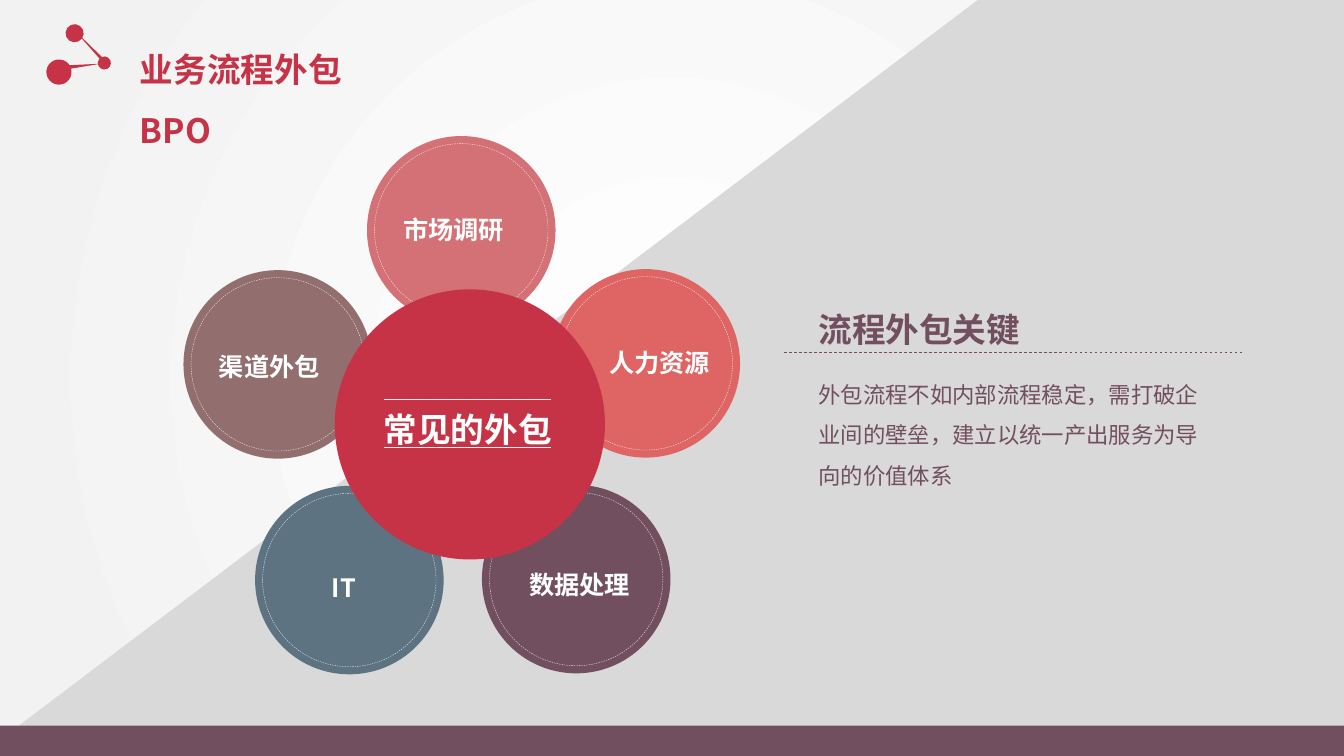
import pptx
import pptx.util
import pptx.dml.color
import pptx.enum.dml
import pptx.enum.shapes
import pptx.enum.text
import pptx.oxml
import pptx.oxml.ns
from dataclasses import dataclass

Inches = pptx.util.Inches
Kind = pptx.enum.shapes.MSO_SHAPE
Align = pptx.enum.text.PP_ALIGN
Fit = pptx.enum.text.MSO_AUTO_SIZE
DASH = pptx.enum.dml.MSO_LINE.DASH
qn = pptx.oxml.ns.qn


@dataclass(frozen=True)
class Theme:
    font: str = "Noto Sans CJK SC"
    red: str = "C73346"
    plum: str = "724F5F"
    slate: str = "5D7381"
    coral: str = "DE6564"
    rose: str = "D47176"
    brown: str = "926E6E"
    gray: str = "D9D9D9"
    pale: str = "F2F2F2"
    white: str = "FFFFFF"
    head: int = 24
    label: int = 18
    body: int = 16


T = Theme()
PETAL, RING = 1.87, 1.72
TILT = 17.7

# Petals, back to front: label, colour, left, top, text centre, text top, text width
PETALS = [
    ("数据处理", T.plum, 4.78, 4.81, 5.75, 5.45, 1.58),
    ("IT", T.slate, 2.53, 4.82, 3.41, 5.48, 0.58),
    ("人力资源", T.coral, 5.47, 2.67, 6.54, 3.25, 1.58),
    ("市场调研", T.rose, 3.64, 1.35, 4.5, 1.93, 1.58),
    ("渠道外包", T.brown, 1.82, 2.68, 2.67, 3.29, 1.58),
]

# Icon parts: kind, left, top, width, height, turn, flip
ICON = [
    (Kind.OVAL, 0.46, 0.59, 0.25, 0.25, 36.1, False),
    (Kind.OVAL, 0.97, 0.56, 0.13, 0.13, 36.1, False),
    (Kind.ISOSCELES_TRIANGLE, 0.76, 0.44, 0.05, 0.43, 83.9, False),
    (Kind.OVAL, 0.65, 0.24, 0.18, 0.18, 36.1, False),
    (Kind.ISOSCELES_TRIANGLE, 0.86, 0.25, 0.03, 0.39, 316.5, True),
]


def color(code):
    return pptx.dml.color.RGBColor.from_string(code)


def stroke(line, code, width, dash=None):
    line.color.rgb = color(code)
    line.width = pptx.util.Pt(width)
    if dash:
        line.dash_style = dash


def shape(shapes, kind, x, y, w, h, fill=None, turn=0, flip=False):
    item = shapes.add_shape(kind, Inches(x), Inches(y), Inches(w), Inches(h))
    item.shadow.inherit = False
    item.rotation = turn
    item.line.fill.background()
    if fill:
        item.fill.solid()
        item.fill.fore_color.rgb = color(fill)
    else:
        item.fill.background()
    if flip:
        item.element.spPr.find(qn("a:xfrm")).set("flipH", "1")
    return item


def text(slide, words, x, y, w, h, size=T.label, tint=T.white,
         bold=True, align=Align.LEFT, wrap=True):
    box = slide.shapes.add_textbox(Inches(x), Inches(y), Inches(w), Inches(h))
    frame = box.text_frame
    frame.word_wrap = wrap
    frame.auto_size = Fit.SHAPE_TO_FIT_TEXT
    para = frame.paragraphs[0]
    para.alignment = align
    para.line_spacing = 1.5
    run = para.add_run()
    run.text = words
    font = run.font
    font.name, font.size, font.bold = T.font, pptx.util.Pt(size), bold
    font.color.rgb = color(tint)
    # East Asian glyphs use the same face
    face = pptx.oxml.parse_xml(
        f'<a:ea {pptx.oxml.ns.nsdecls("a")} typeface="{T.font}"/>')
    run.font._element.find(qn("a:latin")).addnext(face)


def rule(slide, left, right, y, code, dash=None):
    line = slide.shapes.add_connector(
        pptx.enum.shapes.MSO_CONNECTOR.STRAIGHT,
        Inches(left), Inches(y), Inches(right), Inches(y))
    stroke(line.line, code, 0.5, dash)
    props = line.element.spPr
    props.append(props.makeelement(qn("a:effectLst"), {}))


def backdrop(slide):
    fill = slide.background.fill
    fill.gradient()
    for stop, code, place in zip(fill.gradient_stops, (T.white, T.pale), (0, 0.91)):
        stop.color.rgb = color(code)
        stop.position = place
    # Turn the linear blend into a circular one
    grad = slide.element.find(".//" + qn("a:gradFill"))
    circle = pptx.oxml.parse_xml(
        f'<a:path {pptx.oxml.ns.nsdecls("a")} path="circle">'
        '<a:fillToRect l="50000" t="50000" r="50000" b="50000"/></a:path>')
    grad.replace(grad.find(qn("a:lin")), circle)
    shape(slide.shapes, Kind.RIGHT_TRIANGLE, -0.21, -2.75, 13.54, 10.25,
          T.gray, flip=True)


def petal(slide, fill, x, y):
    group = slide.shapes.add_group_shape().shapes
    shape(group, Kind.OVAL, x, y, PETAL, PETAL, fill, TILT)
    inset = (PETAL - RING) / 2
    ring = shape(group, Kind.OVAL, x + inset, y + inset, RING, RING, turn=TILT)
    stroke(ring.line, T.pale, 0.25, DASH)


def icon(slide):
    group = slide.shapes.add_group_shape().shapes
    for kind, x, y, w, h, turn, flip in ICON:
        shape(group, kind, x, y, w, h, T.red, turn, flip)


def main():
    deck = pptx.Presentation()
    deck.slide_width, deck.slide_height = Inches(13.33), Inches(7.5)
    slide = deck.slides.add_slide(deck.slide_layouts[6])
    backdrop(slide)

    # Flower of services
    for _, fill, x, y, *_ in PETALS:
        petal(slide, fill, x, y)
    shape(slide.shapes, Kind.OVAL, 3.32, 2.87, 2.68, 2.68, T.red)
    text(slide, "常见的外包", 3.41, 3.81, 2.46, 0.92, size=T.head,
         align=Align.CENTER, wrap=False)
    for label, _, _, _, mid, top, wide in PETALS:
        text(slide, label, mid - wide / 2, top, wide, 0.66,
             align=Align.CENTER, wrap=False)
    for y in (3.96, 4.44):
        rule(slide, 3.81, 5.47, y, T.pale)

    # Title
    icon(slide)
    text(slide, "业务流程外包BPO", 1.29, 0.24, 2.9, 0.71, size=T.head, tint=T.red)

    # Key point
    text(slide, "流程外包关键", 8.02, 2.82, 2.31, 0.64, size=T.head, tint=T.plum)
    rule(slide, 7.78, 12.33, 3.5, T.plum, DASH)
    text(slide, "外包流程不如内部流程稳定，需打破企业间的壁垒，建立以统一产出服务为导向的价值体系",
         8.02, 3.6, 4.18, 1.31, size=T.body, tint=T.plum, bold=False)

    # Footer band
    shape(slide.shapes, Kind.RECTANGLE, 0, 7.2, 13.33, 0.3, T.plum)
    deck.save("out.pptx")


if __name__ == "__main__":
    main()
